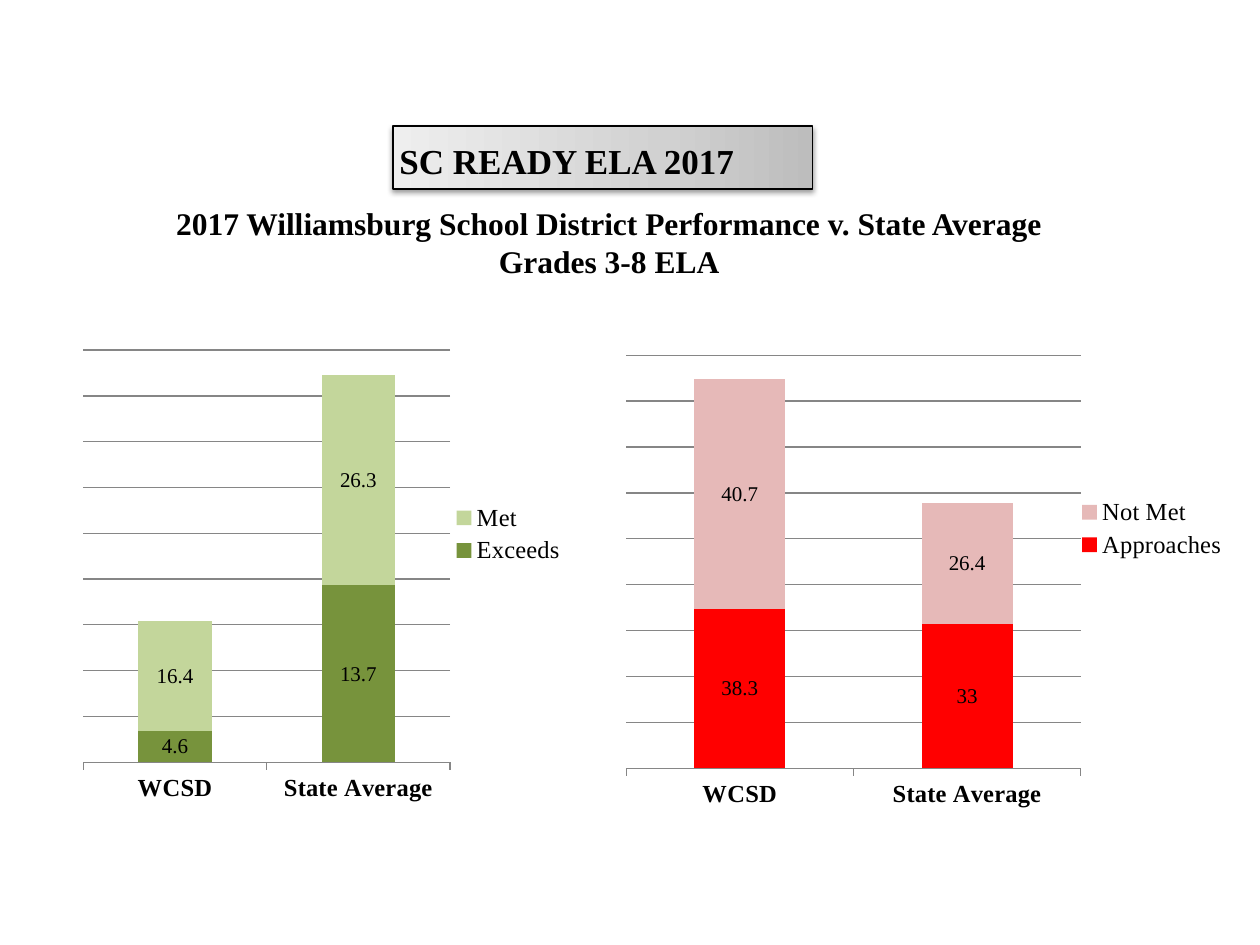
from copy import deepcopy
from lxml import etree
from pptx import Presentation
from pptx.chart.data import CategoryChartData
from pptx.dml.color import RGBColor
from pptx.enum.chart import XL_CHART_TYPE, XL_LEGEND_POSITION, XL_TICK_LABEL_POSITION, XL_TICK_MARK
from pptx.enum.shapes import MSO_SHAPE
from pptx.enum.text import MSO_ANCHOR, MSO_AUTO_SIZE, PP_ALIGN
from pptx.oxml import parse_xml
from pptx.oxml.ns import nsdecls, qn
from pptx.util import Inches, Pt

COLORS = {"text": "000000", "grid": "868686",
          "light": "EEEEEE", "middle": "D1D1D1", "dark": "BDBDBD",
          "exceeds": "77933C", "met": "C3D69B",
          "approaches": "FF0000", "not met": "E6B9B8"}
FONT = "Times New Roman"


def rgb(key):
    return RGBColor.from_string(COLORS[key])


def set_font(font, size, bold=False):
    for name, value in {"name": FONT, "size": Pt(size), "bold": bold}.items():
        setattr(font, name, value)
    font.color.rgb = rgb("text")


prs = Presentation()
prs.slide_width, prs.slide_height = Inches(10), Inches(7.5)
slide = prs.slides.add_slide(prs.slide_layouts[5])

heading = slide.shapes.title
heading.left, heading.top = Inches(1.09), Inches(1.57)
heading.width, heading.height = Inches(7.49), Inches(1.01)
heading_text = heading.text_frame
heading_text.text = "2017 Williamsburg School District Performance v. State Average\nGrades 3-8 ELA"
heading_format = {"word_wrap": True, "auto_size": MSO_AUTO_SIZE.NONE,
                  "vertical_anchor": MSO_ANCHOR.TOP}
for name, value in heading_format.items():
    setattr(heading_text, name, value)
for paragraph in heading_text.paragraphs:
    paragraph.alignment = PP_ALIGN.CENTER
    set_font(paragraph.font, 18, True)

banner = slide.shapes.add_shape(MSO_SHAPE.RECTANGLE, Inches(3.12), Inches(1), Inches(3.33), Inches(0.5))
banner.fill.gradient()
banner.fill.gradient_angle = 0
stop_list = banner._element.spPr.find(qn("a:gradFill")).find(qn("a:gsLst"))
stop_list.append(deepcopy(stop_list[-1]))
for stop, key, position in zip(banner.fill.gradient_stops, ("light", "middle", "dark"), (0, 0.65, 1)):
    stop.color.rgb = rgb(key)
    stop.position = position
banner.line.color.rgb = rgb("text")
banner.line.width = Pt(0.75)
banner.shadow.inherit = False
banner._element.spPr.find(qn("a:effectLst")).append(parse_xml(
    f'<a:outerShdw {nsdecls("a")} blurRad="40000" dist="20000" dir="5400000" rotWithShape="0">'
    f'<a:srgbClr val="{COLORS["text"]}"><a:alpha val="38000"/></a:srgbClr></a:outerShdw>'))
banner_text = banner.text_frame
banner_format = {"text": "SC READY ELA 2017", "margin_left": Inches(0.05),
                 "margin_top": Inches(0.1), "vertical_anchor": MSO_ANCHOR.MIDDLE}
for name, value in banner_format.items():
    setattr(banner_text, name, value)
banner_text.paragraphs[0].alignment = PP_ALIGN.LEFT
set_font(banner_text.paragraphs[0].font, 20, True)

charts = [
    {"at": (0.42, 1.78, 4.17, 4.92), "top": 0.203, "height": 0.665, "max": 45, "unit": 5,
     "series": [("Exceeds", (3.4, 19.3), ("4.6", "13.7")),
                ("Met", (12, 23), ("16.4", "26.3"))]},
    {"at": (4.67, 1.61, 5.17, 5.17), "top": 0.234, "height": 0.634, "max": 90, "unit": 10,
     "series": [("Approaches", (34.7, 31.5), ("38.3", "33")),
                ("Not Met", (50.1, 26.4), ("40.7", "26.4"))]},
]
for performance in charts:
    data = CategoryChartData()
    data.categories = ["WCSD", "State Average"]
    for name, values, _ in performance["series"]:
        data.add_series(name, values)
    chart = slide.shapes.add_chart(XL_CHART_TYPE.COLUMN_STACKED,
                                   *map(Inches, performance["at"]), data).chart
    chart.has_title = False
    set_font(chart.font, 10)

    chart.has_legend = True
    chart.legend.position = XL_LEGEND_POSITION.RIGHT
    chart.legend.include_in_layout = False
    set_font(chart.legend.font, 14)

    districts = chart.category_axis
    districts.major_tick_mark = XL_TICK_MARK.OUTSIDE
    districts.format.line.color.rgb = rgb("grid")
    set_font(districts.tick_labels.font, 14, True)

    scores = chart.value_axis
    scale = {"minimum_scale": 0, "maximum_scale": performance["max"],
             "major_unit": performance["unit"], "has_major_gridlines": True,
             "tick_label_position": XL_TICK_LABEL_POSITION.NONE, "visible": False}
    for name, value in scale.items():
        setattr(scores, name, value)
    scores.major_gridlines.format.line.color.rgb = rgb("grid")

    plot = chart.plots[0]
    for name, value in {"gap_width": 150, "overlap": 100, "vary_by_categories": False}.items():
        setattr(plot, name, value)
    for series, (name, values, labels) in zip(plot.series, performance["series"]):
        series.format.fill.solid()
        series.format.fill.fore_color.rgb = rgb(name.lower())
        series.data_labels.show_value = True
        set_font(series.data_labels.font, 12)
        for index, (value, label) in enumerate(zip(values, labels)):
            if str(value) != label:
                caption = series.points[index].data_label.text_frame
                caption.text = label
                set_font(caption.paragraphs[0].runs[0].font, 12)

    plot_area = chart._chartSpace.chart.plotArea
    for old_layout in plot_area.findall(qn("c:layout")):
        plot_area.remove(old_layout)
    layout = etree.Element(qn("c:layout"))
    manual = etree.SubElement(layout, qn("c:manualLayout"))
    settings = {"layoutTarget": "inner", "xMode": "edge", "yMode": "edge", "x": 0.058,
                "y": performance["top"], "w": 0.698, "h": performance["height"]}
    for tag, value in settings.items():
        etree.SubElement(manual, qn(f"c:{tag}")).set("val", str(value))
    plot_area.insert(0, layout)

prs.save("out.pptx")
